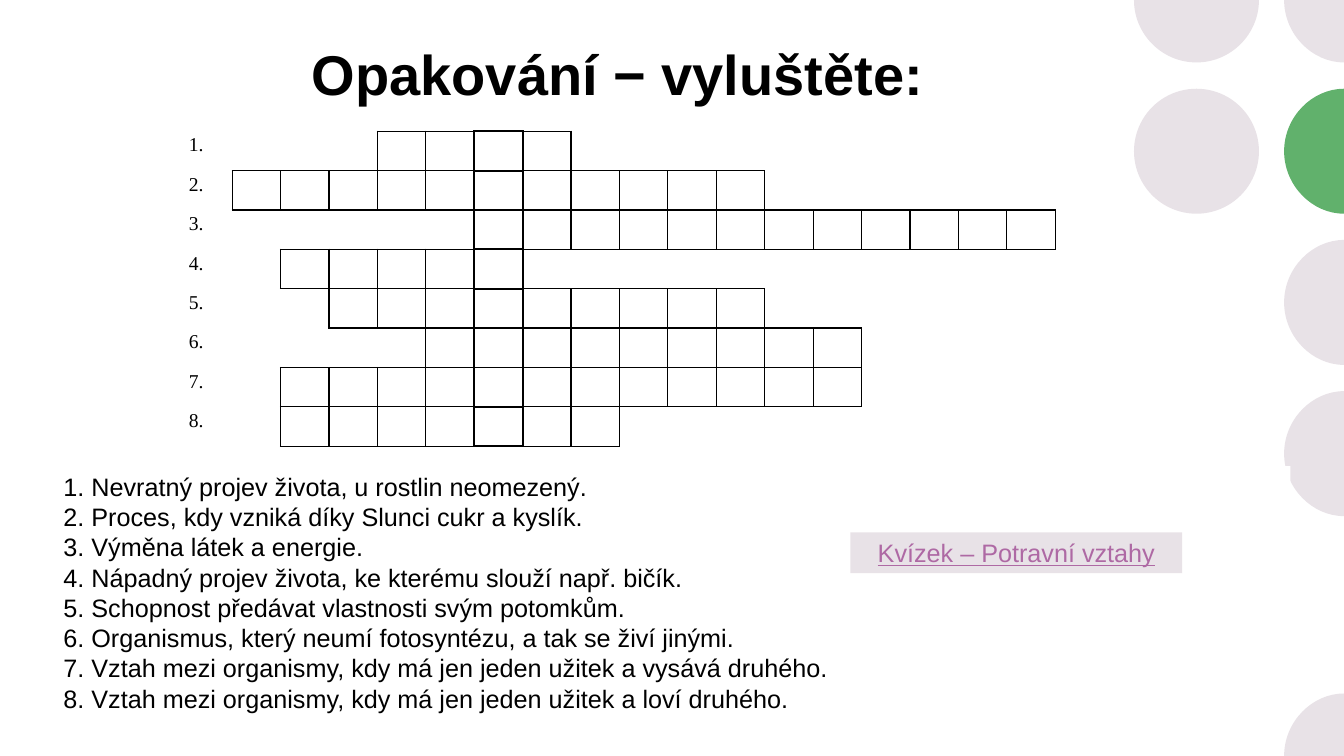
"""Build a slide with a biology crossword, its clues and a quiz label."""
import math

import pptx
import pptx.dml.color
import pptx.enum.shapes
import pptx.enum.text
import pptx.oxml
import pptx.oxml.ns
import pptx.util

PX = 9525
WIDTH, HEIGHT = 1280, 720
COLORS = {"text": "000000", "paper": "FFFFFF", "dot": "E8E2E7",
          "accent": "61B16C", "label": "AE69A4"}
DOT_SIZE, DOT_PITCH = 119, 144
DOT_LEFTS = (1080, 1223)
CUT_DOTS = [(0, 0, "dot", 0, 2), (1, 5, "dot", 180, 1), (1, 3, "dot", 90, 2),
            (1, 2, "dot", 90, 2), (1, 1, "accent", 90, 2), (1, 0, "dot", 90, 1)]
ARC_HANDLE = 0.55
WORDS = [(4, 4), (1, 11), (6, 12), (2, 5), (3, 9), (5, 9), (2, 12), (2, 7)]
COLUMNS, KEY_COLUMN = 18, 6
SIDES = {"lnL": (0, -1), "lnR": (0, 1), "lnT": (-1, 0), "lnB": (1, 0)}
CLUES = [
    "Nevratný projev života, u rostlin neomezený.",
    "Proces, kdy vzniká díky Slunci cukr a kyslík.",
    "Výměna látek a energie.",
    "Nápadný projev života, ke kterému slouží např. bičík.",
    "Schopnost předávat vlastnosti svým potomkům.",
    "Organismus, který neumí fotosyntézu, a tak se živí jinými.",
    "Vztah mezi organismy, kdy má jen jeden užitek a vysává druhého.",
    "Vztah mezi organismy, kdy má jen jeden užitek a loví druhého.",
]


def box(*lengths):
    return [pptx.util.Emu(round(n * PX)) for n in lengths]


def rgb(name):
    return pptx.dml.color.RGBColor.from_string(COLORS[name])


def set_font(p, size, color="text", name="Arial"):
    p.font.name = name
    p.font.size = pptx.util.Pt(size)
    p.font.color.rgb = rgb(color)


def paint(sp, color):
    sp.shadow.inherit = False
    sp.fill.solid()
    sp.fill.fore_color.rgb = rgb(color)
    sp.line.fill.background()


def add_dot(slide, column, row, color):
    top = row * DOT_PITCH - DOT_SIZE / 2
    sp = slide.shapes.add_shape(
        pptx.enum.shapes.MSO_SHAPE.OVAL,
        *box(DOT_LEFTS[column], top, DOT_SIZE, DOT_SIZE))
    paint(sp, color)


def quarter_arc(angle):
    c, s = round(math.cos(math.radians(angle))), round(math.sin(math.radians(angle)))
    k = ARC_HANDLE
    return [(c, s), (c - k * s, s + k * c), (k * c - s, k * s + c), (-s, c)]


def bend_segments(sp, count):
    lines = sp._element.findall(".//" + pptx.oxml.ns.qn("a:lnTo"))
    for i in range(0, 3 * count, 3):
        curve = pptx.oxml.parse_xml(
            f'<a:cubicBezTo {pptx.oxml.ns.nsdecls("a")}/>')
        lines[i].addprevious(curve)
        for line in lines[i:i + 3]:
            curve.append(line[0])
            line.getparent().remove(line)


def add_cut_dot(slide, column, row, color, start, quarters):
    radius = DOT_SIZE / 2
    x, y = DOT_LEFTS[column] + radius, row * DOT_PITCH
    units = quarter_arc(start)
    for i in range(1, quarters):
        units += quarter_arc(start + 90 * i)[1:]
    points = [(min(x + radius * u, WIDTH) * PX, (y + radius * v) * PX)
              for u, v in units]
    if quarters == 1:
        points.append((WIDTH * PX, y * PX))
    builder = slide.shapes.build_freeform(*points[0])
    builder.add_line_segments(points[1:], close=True)
    sp = builder.convert_to_shape()
    bend_segments(sp, quarters)
    paint(sp, color)


def add_title(slide, text):
    sp = slide.shapes.title
    sp.left, sp.top, sp.width, sp.height = box(208, 34, 760, 79)
    sp.text_frame.text = text
    p = sp.text_frame.paragraphs[0]
    p.alignment = pptx.enum.text.PP_ALIGN.CENTER
    p.line_spacing = 0.9
    set_font(p, 40)
    p.font.bold = True


def add_panel(slide, bounds, fill, lines, color, align):
    sp = slide.shapes.add_shape(pptx.enum.shapes.MSO_SHAPE.RECTANGLE, *box(*bounds))
    paint(sp, fill)
    tf = sp.text_frame
    tf.word_wrap = True
    tf.vertical_anchor = pptx.enum.text.MSO_ANCHOR.TOP
    for i, line in enumerate(lines):
        p = tf.add_paragraph() if i else tf.paragraphs[0]
        p.text = line
        p.alignment = align
        p.line_spacing = pptx.util.Pt(21.6)
        set_font(p, 18, color)
    return sp


def weight(row, column):
    if not 0 <= row < len(WORDS):
        return 0
    start, length = WORDS[row]
    if not start <= column < start + length:
        return 0
    return 1.5 if column == KEY_COLUMN else 1


def set_borders(cell, row, column):
    tc_pr = cell._tc.get_or_add_tcPr()
    for side, (down, right) in SIDES.items():
        width = max(weight(row, column), weight(row + down, column + right))
        fill = (f'<a:solidFill><a:srgbClr val="{COLORS["text"]}"/></a:solidFill>'
                if width else "<a:noFill/>")
        tc_pr.append(pptx.oxml.parse_xml(
            f'<a:{side} {pptx.oxml.ns.nsdecls("a")} w="{pptx.util.Pt(width)}">'
            f"{fill}</a:{side}>"))


def add_crossword(slide):
    left, top, width, height = box(175, 125, 830, 300)
    table = slide.shapes.add_table(
        len(WORDS), COLUMNS, left, top, width, height).table
    table.first_row = table.horz_banding = False
    for column in table.columns:
        column.width = width // COLUMNS
    for r, row in enumerate(table.rows):
        row.height = height // len(WORDS)
        for c, cell in enumerate(row.cells):
            set_borders(cell, r, c)
            cell.fill.background()
            cell.margin_left = cell.margin_right = pptx.util.Inches(0.05)
            cell.margin_top = cell.margin_bottom = 0
            p = cell.text_frame.paragraphs[0]
            if c == 0:
                p.text = f"{r + 1}."
                p.line_spacing = 1.15
            set_font(p, 14, name="Times New Roman")


def main():
    prs = pptx.Presentation()
    prs.slide_width, prs.slide_height = box(WIDTH, HEIGHT)
    slide = prs.slides.add_slide(prs.slide_layouts[5])
    add_dot(slide, 0, 1, "dot")
    for dot in CUT_DOTS:
        add_cut_dot(slide, *dot)
    add_title(slide, "Opakování − vyluštěte:")
    align = pptx.enum.text.PP_ALIGN
    clues = [f"{n}. {clue}" for n, clue in enumerate(CLUES, 1)]
    add_panel(slide, (51, 444, 1178, 242), "paper", clues, "text", align.LEFT)
    add_crossword(slide)
    label = add_panel(slide, (810, 507, 316, 39), "dot",
                      ["Kvízek – Potravní vztahy"], "label", align.CENTER)
    label.text_frame.paragraphs[0].font.underline = True
    prs.save("out.pptx")


if __name__ == "__main__":
    main()
